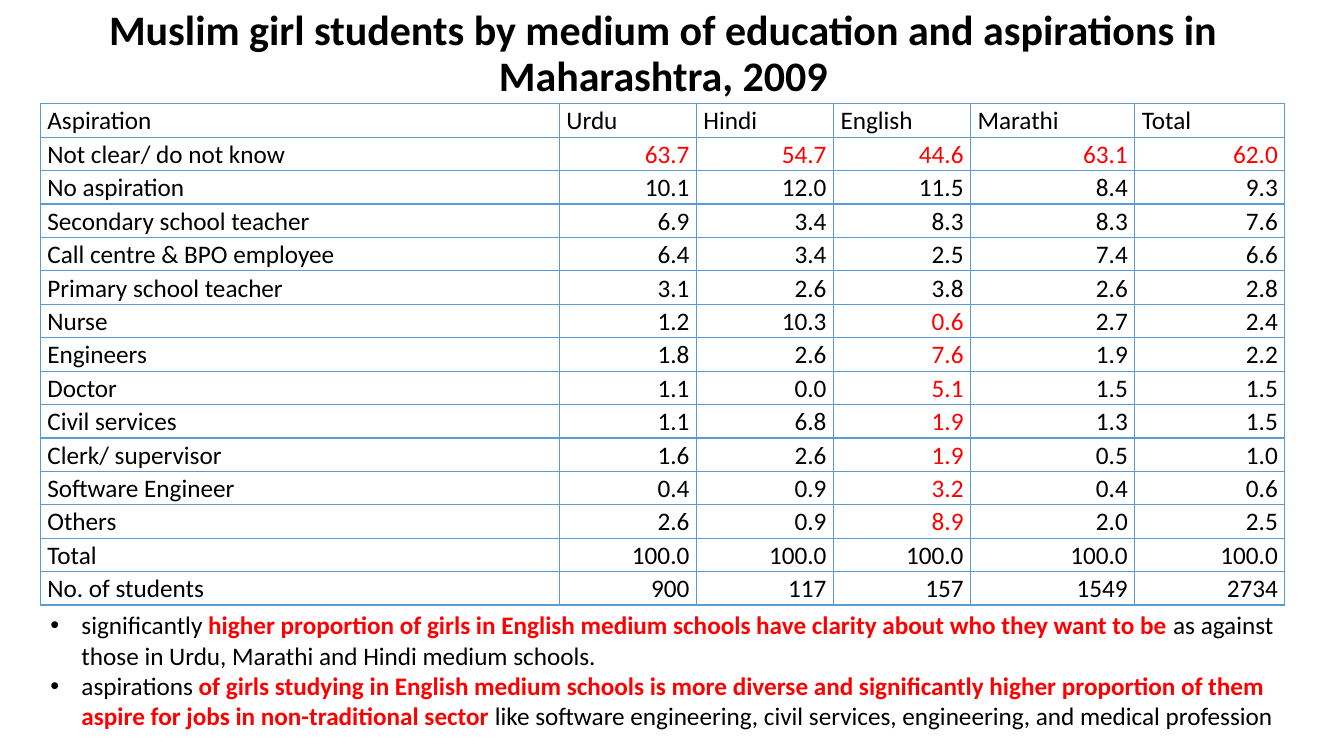
from lxml.etree import SubElement
from pptx import Presentation
from pptx.dml.color import RGBColor
from pptx.enum.text import MSO_ANCHOR, MSO_AUTO_SIZE, PP_ALIGN
from pptx.oxml.ns import qn
from pptx.util import Inches, Pt

BLACK, RED, BLUE = "000000", "FF0000", "5B9BD5"

TITLE = "Muslim girl students by medium of education and aspirations in Maharashtra, 2009"
MEDIUMS = ["Aspiration", "Urdu", "Hindi", "English", "Marathi", "Total"]
ASPIRATIONS = [
    ["Not clear/ do not know", "63.7", "54.7", "44.6", "63.1", "62.0"],
    ["No aspiration", "10.1", "12.0", "11.5", "8.4", "9.3"],
    ["Secondary school teacher", "6.9", "3.4", "8.3", "8.3", "7.6"],
    ["Call centre & BPO employee", "6.4", "3.4", "2.5", "7.4", "6.6"],
    ["Primary school teacher", "3.1", "2.6", "3.8", "2.6", "2.8"],
    ["Nurse", "1.2", "10.3", "0.6", "2.7", "2.4"],
    ["Engineers", "1.8", "2.6", "7.6", "1.9", "2.2"],
    ["Doctor", "1.1", "0.0", "5.1", "1.5", "1.5"],
    ["Civil services", "1.1", "6.8", "1.9", "1.3", "1.5"],
    ["Clerk/ supervisor", "1.6", "2.6", "1.9", "0.5", "1.0"],
    ["Software Engineer", "0.4", "0.9", "3.2", "0.4", "0.6"],
    ["Others", "2.6", "0.9", "8.9", "2.0", "2.5"],
    ["Total", "100.0", "100.0", "100.0", "100.0", "100.0"],
    ["No. of students", "900", "117", "157", "1549", "2734"],
]
COLUMN_WIDTHS = [38.62, 10.2, 10.2, 10.2, 12.22, 11.17]
ROW_HEIGHT = 4.42

# Each finding is an opening, an emphasised part and an ending.
FINDINGS = [
    ("significantly ",
     "higher proportion of girls in English medium schools have clarity "
     "about who they want to be ",
     "as against those in Urdu, Marathi and Hindi medium schools."),
    ("aspirations ",
     "of girls studying in English medium schools is more diverse and significantly "
     "higher proportion of them aspire for jobs in non-traditional sector ",
     "like software engineering, civil services, engineering, and medical profession"),
]


def is_highlighted(row, column):
    """The unclear share everywhere, and English from Nurse to Others."""
    return column > 0 and row == 1 or column == 3 and 6 <= row <= 12


class SlideBuilder:
    """Places elements on a grid of 100 columns by 100 rows."""

    font_name = "Calibri"
    body_size = 18
    title_size = 30

    def __init__(self, presentation):
        self.column = presentation.slide_width / 100
        self.row = presentation.slide_height / 100
        self.slide = presentation.slides.add_slide(presentation.slide_layouts[5])

    def place(self, left, top, width, height):
        return (round(left * self.column), round(top * self.row),
                round(width * self.column), round(height * self.row))

    def style(self, run, size=body_size, color=BLACK, bold=False):
        run.font.name = self.font_name
        run.font.size = Pt(size)
        run.font.bold = bold
        run.font.color.rgb = RGBColor.from_string(color)

    def title(self, wording, *area):
        heading = self.slide.shapes.title
        heading.left, heading.top, heading.width, heading.height = self.place(*area)
        frame = heading.text_frame
        frame.text = wording
        frame.auto_size = MSO_AUTO_SIZE.NONE
        frame.vertical_anchor = MSO_ANCHOR.MIDDLE
        paragraph = frame.paragraphs[0]
        paragraph.alignment = PP_ALIGN.CENTER
        paragraph.line_spacing = 0.9
        self.style(paragraph.runs[0], self.title_size, bold=True)

    def table(self, rows, widths, row_height, left, top):
        area = self.place(left, top, sum(widths), row_height * len(rows))
        grid = self.slide.shapes.add_table(len(rows), len(widths), *area).table
        grid.first_row = grid.horz_banding = False
        for column, width in zip(grid.columns, widths):
            column.width = round(width * self.column)
        for r, values in enumerate(rows):
            grid.rows[r].height = round(row_height * self.row)
            for c, value in enumerate(values):
                numeric = r > 0 and c > 0
                self.cell(grid.cell(r, c), value,
                          PP_ALIGN.RIGHT if numeric else PP_ALIGN.JUSTIFY,
                          RED if is_highlighted(r, c) else BLACK)

    def cell(self, cell, value, alignment, color):
        cell.text_frame.text = value
        cell.margin_left = cell.margin_right = Inches(0.07)
        cell.margin_top = cell.margin_bottom = 0
        paragraph = cell.text_frame.paragraphs[0]
        paragraph.alignment = alignment
        paragraph.line_spacing = 1.07
        self.style(paragraph.runs[0], color=color)
        properties = cell._tc.get_or_add_tcPr()
        for side in ("a:lnL", "a:lnR", "a:lnT", "a:lnB"):
            border = SubElement(properties, qn(side), w=str(Pt(1)))
            SubElement(SubElement(border, qn("a:solidFill")), qn("a:srgbClr"), val=BLUE)
        cell.fill.background()

    def bullets(self, items, *area):
        frame = self.slide.shapes.add_textbox(*self.place(*area)).text_frame
        frame.word_wrap = True
        frame.auto_size = MSO_AUTO_SIZE.SHAPE_TO_FIT_TEXT
        frame.text = "\n".join("" for _ in items)
        indent = Inches(0.31)
        for paragraph, (opening, emphasis, ending) in zip(frame.paragraphs, items):
            properties = paragraph._p.get_or_add_pPr()
            properties.set("marL", str(indent))
            properties.set("indent", str(-indent))
            SubElement(properties, qn("a:buFont"), typeface="Arial")
            SubElement(properties, qn("a:buChar"), char="•")
            for wording, strong in ((opening, False), (emphasis, True), (ending, False)):
                run = paragraph.add_run()
                run.text = wording
                self.style(run, color=RED if strong else BLACK, bold=strong)


def main():
    presentation = Presentation()
    presentation.slide_width = Inches(13.33)
    presentation.slide_height = Inches(7.5)
    builder = SlideBuilder(presentation)
    builder.title(TITLE, 4.28, 1.6, 90.17, 11.33)
    builder.table([MEDIUMS] + ASPIRATIONS, COLUMN_WIDTHS, ROW_HEIGHT, 3, 13.73)
    builder.bullets(FINDINGS, 3, 80, 93.77, 17.47)
    presentation.save("out.pptx")


if __name__ == "__main__":
    main()
